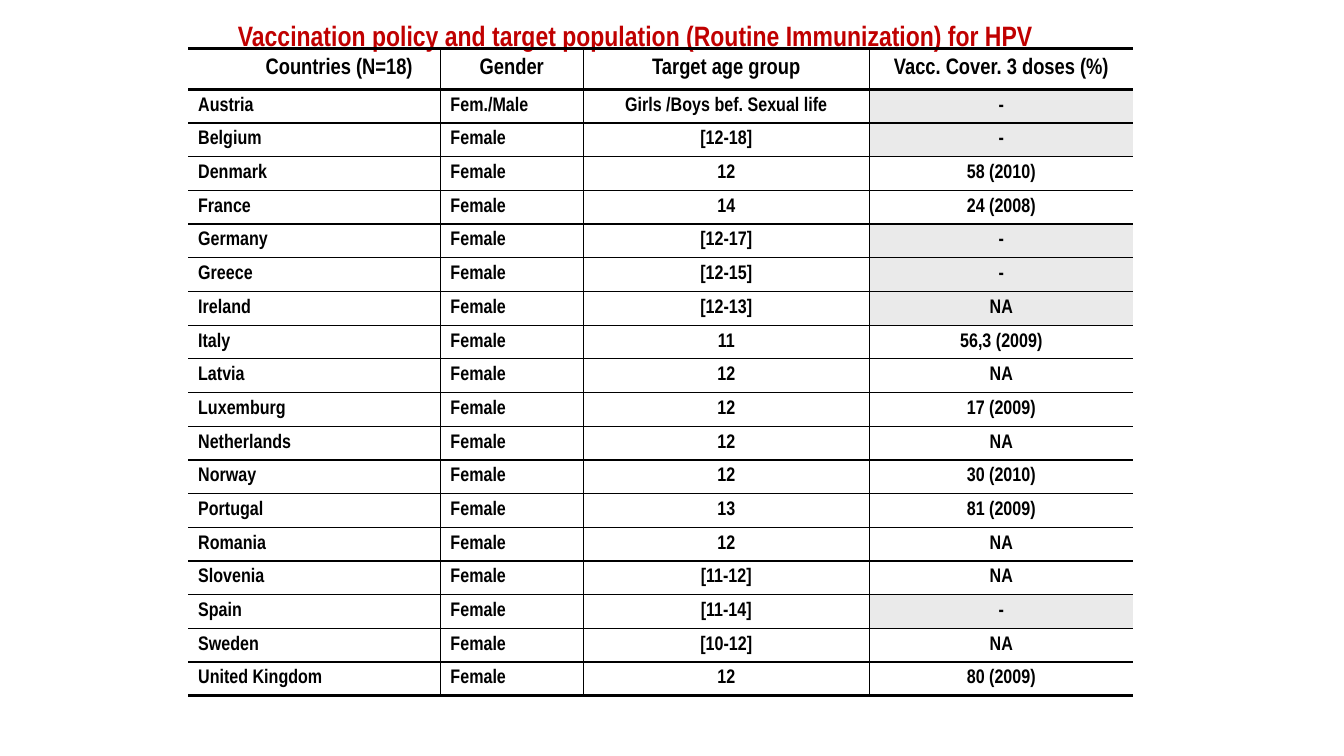
from dataclasses import dataclass

from lxml import etree
from pptx import Presentation
from pptx.dml.color import RGBColor
from pptx.enum.text import MSO_ANCHOR, MSO_AUTO_SIZE, PP_ALIGN
from pptx.oxml.ns import qn
from pptx.util import Cm, Pt

LEFT, CENTER = PP_ALIGN.LEFT, PP_ALIGN.CENTER
TOP, MIDDLE = MSO_ANCHOR.TOP, MSO_ANCHOR.MIDDLE
NO_AUTOFIT = MSO_AUTO_SIZE.NONE


@dataclass(frozen=True)
class Theme:
    font: str = "Arial Narrow"
    heading: str = "C00000"
    ink: str = "000000"
    missing: str = "EAEAEA"
    heading_size: float = 20
    header_size: float = 16
    body_size: float = 14
    thin: float = 1
    thick: float = 2.25


THEME = Theme()

HEADING = "Vaccination policy and target population (Routine Immunization) for HPV"
HEADERS = ("Countries (N=18)", "Gender", "Target age group", "Vacc. Cover. 3 doses (%)")
POLICIES = (
    ("Austria", "Fem./Male", "Girls /Boys bef. Sexual life", "-"),
    ("Belgium", "Female", "[12-18]", "-"),
    ("Denmark", "Female", "12", "58 (2010)"),
    ("France", "Female", "14", "24 (2008)"),
    ("Germany", "Female", "[12-17]", "-"),
    ("Greece", "Female", "[12-15]", "-"),
    ("Ireland", "Female", "[12-13]", "NA"),
    ("Italy", "Female", "11", "56,3 (2009)"),
    ("Latvia", "Female", "12", "NA"),
    ("Luxemburg", "Female", "12", "17 (2009)"),
    ("Netherlands", "Female", "12", "NA"),
    ("Norway", "Female", "12", "30 (2010)"),
    ("Portugal", "Female", "13", "81 (2009)"),
    ("Romania", "Female", "12", "NA"),
    ("Slovenia", "Female", "[11-12]", "NA"),
    ("Spain", "Female", "[11-14]", "-"),
    ("Sweden", "Female", "[10-12]", "NA"),
    ("United Kingdom", "Female", "12", "80 (2009)"),
)
SHADED_COUNTRIES = {"Austria", "Belgium", "Germany", "Greece", "Ireland", "Spain"}
COLUMN_SHARES = (0.267, 0.151, 0.303, 0.279)
HEADER_HEIGHT = Cm(1.03)
HEADER_INDENT = Cm(1.51)


def write(frame, text, *, size, color=THEME.ink, align=LEFT):
    paragraph = frame.paragraphs[0]
    paragraph.alignment = align
    run = paragraph.add_run()
    run.text = text
    font = run.font
    font.name = THEME.font
    font.size = Pt(size)
    font.bold = True
    font.color.rgb = RGBColor.from_string(color)


def set_borders(cell, **widths):
    properties = cell._tc.get_or_add_tcPr()
    for side in "LRTB":
        width = widths[side]
        border = etree.SubElement(properties, qn(f"a:ln{side}"), w=str(Pt(width)))
        if width:
            fill = etree.SubElement(border, qn("a:solidFill"))
            etree.SubElement(fill, qn("a:srgbClr"), val=THEME.ink)
        else:
            etree.SubElement(border, qn("a:noFill"))


def add_heading(slide, left, top, width, height):
    heading = slide.shapes.title
    heading.left, heading.top, heading.width, heading.height = left, top, width, height
    frame = heading.text_frame
    frame.word_wrap = True
    frame.auto_size = NO_AUTOFIT
    frame.vertical_anchor = TOP
    write(frame, HEADING, size=THEME.heading_size, color=THEME.heading)


def add_policy_table(slide, left, top, width, height):
    rows = (HEADERS, *POLICIES)
    last_row, last_column = len(POLICIES), len(HEADERS) - 1
    table = slide.shapes.add_table(len(rows), len(HEADERS), left, top, width, height).table
    table.first_row = False
    table.horz_banding = False
    for column, share in zip(table.columns, COLUMN_SHARES):
        column.width = round(width * share)
    for row in table.rows:
        row.height = (height - HEADER_HEIGHT) // len(POLICIES)
    table.rows[0].height = HEADER_HEIGHT

    for r, values in enumerate(rows):
        is_header = r == 0
        for c, value in enumerate(values):
            cell = table.cell(r, c)
            cell.vertical_anchor = MIDDLE
            set_borders(
                cell,
                L=THEME.thin if c else 0,
                R=THEME.thin if c < last_column else 0,
                T=THEME.thick if r < 2 else THEME.thin,
                B=THEME.thick if r in (0, last_row) else THEME.thin,
            )
            if c == last_column and values[0] in SHADED_COUNTRIES:
                cell.fill.solid()
                cell.fill.fore_color.rgb = RGBColor.from_string(THEME.missing)
            else:
                cell.fill.background()
            write(
                cell.text_frame,
                value,
                size=THEME.header_size if is_header else THEME.body_size,
                align=CENTER if is_header or c > 1 else LEFT,
            )
    table.cell(0, 0).margin_left = HEADER_INDENT


def main():
    deck = Presentation()
    deck.slide_width, deck.slide_height = Cm(33.87), Cm(19.05)
    slide = deck.slides.add_slide(deck.slide_layouts.get_by_name("Title Only"))
    add_heading(slide, Cm(5.74), Cm(0.33), Cm(20.73), Cm(1.09))
    add_policy_table(slide, Cm(4.74), Cm(1.22), Cm(23.82), Cm(16.33))
    deck.save("out.pptx")


if __name__ == "__main__":
    main()
